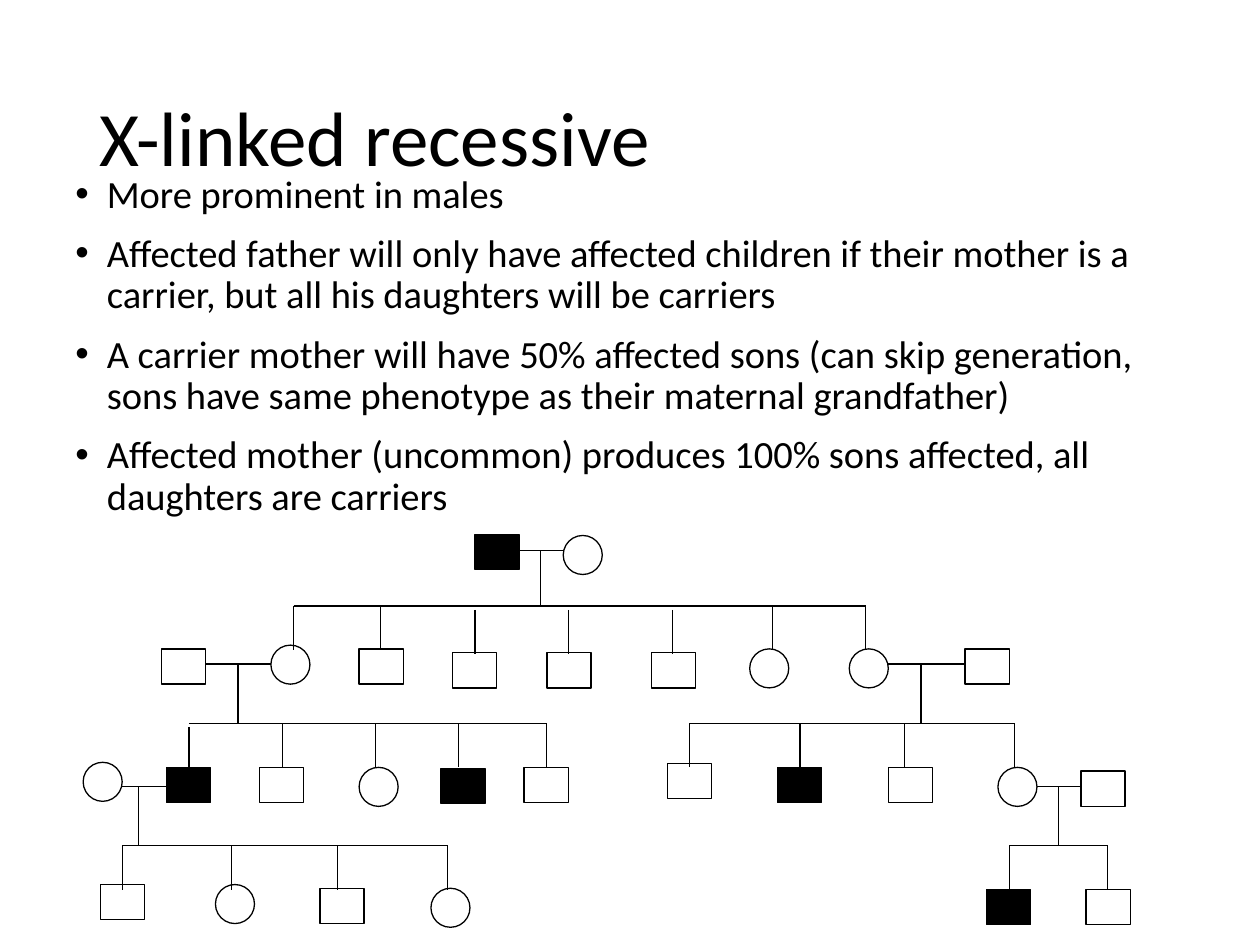
from dataclasses import dataclass
from typing import NamedTuple

from lxml.etree import SubElement
from pptx import Presentation
from pptx.dml.color import RGBColor
from pptx.enum.shapes import MSO_CONNECTOR as Connector, MSO_SHAPE as Shape
from pptx.enum.text import MSO_ANCHOR as Anchor, MSO_AUTO_SIZE as AutoSize, PP_ALIGN as Align
from pptx.oxml.ns import qn
from pptx.util import Inches, Pt


@dataclass(frozen=True)
class Theme:
    """Colours, font and sizes of the slide."""
    ink: RGBColor = RGBColor(0, 0, 0)
    paper: RGBColor = RGBColor(255, 255, 255)
    font: str = "Calibri"
    title: Pt = Pt(44)
    body: Pt = Pt(22)
    stroke: Pt = Pt(0.75)


class Box(NamedTuple):
    """A region in inches."""
    left: float
    top: float
    width: float
    height: float


class Family(NamedTuple):
    """A couple's line, and the children's drops from a shared bar."""
    mates: tuple
    mate_y: float
    stem: float
    bar_y: float
    drops: tuple
    lowered: tuple = ()


THEME = Theme()
TITLE_BOX = Box(0.69, 0.4, 8.62, 1.45)
BODY_BOX = Box(0.5, 1.34, 9, 4.95)
PEDIGREE_BOX = Box(0.66, 4.24, 8.31, 3.1)
DROP, LOWERING = 0.35, 0.03
SYMBOLS = {
    "male": (Shape.RECTANGLE, 0.35, 0.28, THEME.paper),
    "affected": (Shape.RECTANGLE, 0.35, 0.28, THEME.ink),
    "female": (Shape.OVAL, 0.31, 0.31, THEME.paper),
}
POINTS = (
    "More prominent in males",
    "Affected father will only have affected children if their mother is a carrier, "
    "but all his daughters will be carriers",
    "A carrier mother will have 50% affected sons (can skip generation, "
    "sons have same phenotype as their maternal grandfather)",
    "Affected mother (uncommon) produces 100% sons affected, all daughters are carriers",
)
PEOPLE = {
    "male": (
        (0.62, 0.91), (2.19, 0.91), (2.93, 0.94), (3.68, 0.94), (4.51, 0.94), (7, 0.91),
        (1.4, 1.85), (3.5, 1.85), (4.64, 1.82), (6.39, 1.85), (7.92, 1.88),
        (0.14, 2.78), (1.88, 2.81), (7.96, 2.82),
    ),
    "affected": ((3.11, 0), (0.66, 1.85), (2.84, 1.86), (5.51, 1.85), (7.17, 2.82)),
    "female": (
        (3.81, 0.01), (1.49, 0.88), (5.29, 0.91), (6.08, 0.91),
        (0, 1.81), (2.19, 1.85), (7.26, 1.85), (1.05, 2.78), (2.76, 2.81),
    ),
}
FAMILIES = (
    Family((3.46, 3.81), 0.13, 3.63, 0.57,
           (1.67, 2.36, 3.11, 3.85, 4.68, 5.47, 6.21), (3.11, 3.85, 4.68)),
    Family((0.97, 1.49), 1.03, 1.23, 1.5, (0.84, 1.58, 2.32, 2.98, 3.68), (0.84,)),
    Family((6.39, 7), 1.03, 6.65, 1.5, (4.81, 5.69, 6.52, 7.39)),
    Family((0.31, 0.66), 2, 0.44, 2.47, (0.31, 1.18, 2.02, 2.89)),
    Family((7.57, 7.92), 2, 7.74, 2.47, (7.35, 8.13)),
)


def apply(target, values):
    """Set each attribute named in a dict."""
    for name, value in values.items():
        setattr(target, name, value)


def write(para, text, size):
    """Add text to a paragraph in the theme's style."""
    span = para.add_run()
    span.text = text
    apply(span.font, {"name": THEME.font, "size": size})
    span.font.color.rgb = THEME.ink
    apply(para, {"alignment": Align.LEFT, "line_spacing": 0.9})


def add_bullet(para):
    """Give a paragraph a round bullet and a hanging indent."""
    props = para._p.get_or_add_pPr()
    props.set("marL", str(Inches(0.25)))
    props.set("indent", str(Inches(-0.25)))
    SubElement(props, qn("a:buFont")).set("typeface", "Arial")
    SubElement(props, qn("a:buChar")).set("char", "•")


def add_title(page, box, text):
    """Place and format the title."""
    title = page.shapes.title
    apply(title, {name: Inches(value) for name, value in box._asdict().items()})
    frame = title.text_frame
    apply(frame, {"vertical_anchor": Anchor.MIDDLE, "auto_size": AutoSize.NONE})
    write(frame.paragraphs[0], text, THEME.title)


def add_points(page, box, points):
    """Write the bulleted list."""
    frame = page.shapes.add_textbox(*map(Inches, box)).text_frame
    apply(frame, {"word_wrap": True, "auto_size": AutoSize.NONE})
    for index, point in enumerate(points):
        para = frame.add_paragraph() if index else frame.paragraphs[0]
        write(para, point, THEME.body)
        para.space_before = Pt(10)
        add_bullet(para)


def add_person(page, box, kind, x, y):
    """Draw one pedigree symbol."""
    outline, width, height, fill = SYMBOLS[kind]
    place = (box.left + x, box.top + y, width, height)
    person = page.shapes.add_shape(outline, *map(Inches, place))
    person.shadow.inherit = False
    person.fill.solid()
    person.fill.fore_color.rgb = fill
    person.line.color.rgb = THEME.ink
    person.line.width = THEME.stroke


def add_line(page, box, x1, y1, x2, y2):
    """Draw one straight pedigree line."""
    ends = (box.left + x1, box.top + y1, box.left + x2, box.top + y2)
    line = page.shapes.add_connector(Connector.STRAIGHT, *map(Inches, ends))
    line.line.color.rgb = THEME.ink
    line.line.width = THEME.stroke
    SubElement(line._element.spPr, qn("a:effectLst"))


def add_family(page, box, family):
    """Join a couple to their children."""
    start, end = family.mates
    add_line(page, box, start, family.mate_y, end, family.mate_y)
    add_line(page, box, family.stem, family.mate_y, family.stem, family.bar_y)
    add_line(page, box, family.drops[0], family.bar_y, family.drops[-1], family.bar_y)
    for x in family.drops:
        top = family.bar_y + (LOWERING if x in family.lowered else 0)
        add_line(page, box, x, top, x, top + DROP)


def add_pedigree(page, box):
    """Draw the four generations."""
    for kind, places in PEOPLE.items():
        for x, y in places:
            add_person(page, box, kind, x, y)
    for family in FAMILIES:
        add_family(page, box, family)


def main():
    """Build and save the slide."""
    deck = Presentation()
    apply(deck, {"slide_width": Inches(10), "slide_height": Inches(7.5)})
    page = deck.slides.add_slide(deck.slide_layouts[5])
    add_title(page, TITLE_BOX, "X-linked recessive")
    add_points(page, BODY_BOX, POINTS)
    add_pedigree(page, PEDIGREE_BOX)
    deck.save("out.pptx")


if __name__ == "__main__":
    main()
